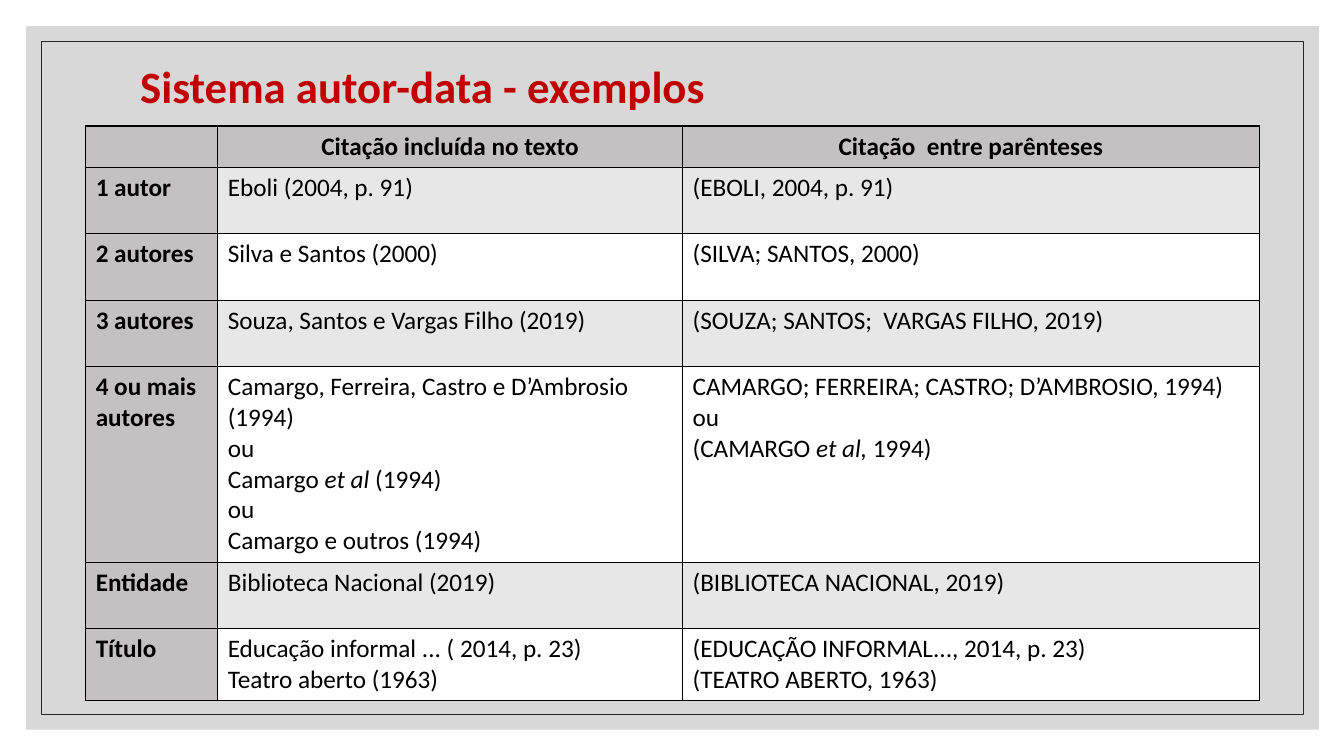
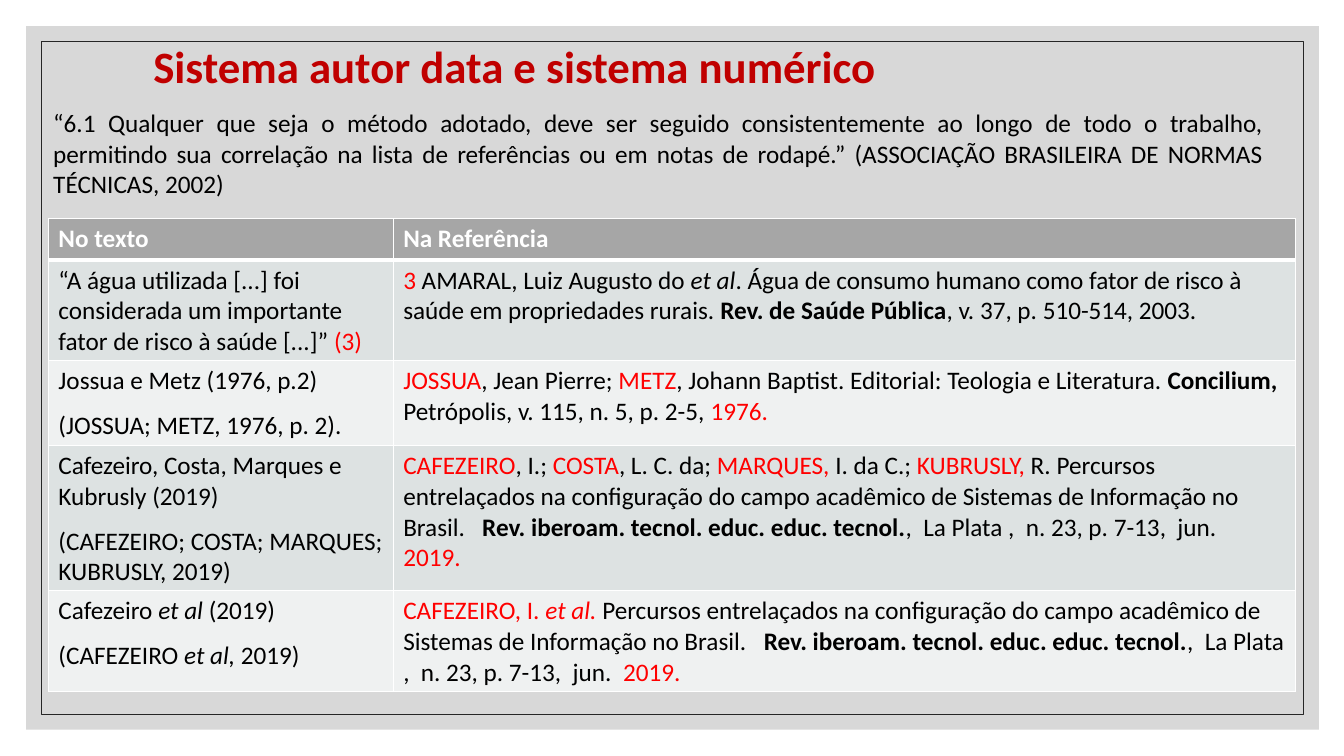
import pptx
import pptx.dml.color
import pptx.enum.shapes
import pptx.enum.text
import pptx.oxml
import pptx.oxml.ns
import pptx.util
from pptx.util import Inches

ALIGN = pptx.enum.text.PP_ALIGN
ANCHOR = pptx.enum.text.MSO_ANCHOR

BLACK, WHITE, RED = "000000", "FFFFFF", "FF0000"
TITLE_RED = "C00000"


def rgb(value):
    return pptx.dml.color.RGBColor.from_string(value)


def set_all(target, values):
    for name, value in values.items():
        setattr(target, name, value)


class Deck:
    """Shared style plus the slide being built."""

    font = "Calibri"
    body_size = 18
    title_size = 32

    def __init__(self):
        self.prs = pptx.Presentation()
        set_all(self.prs, {"slide_width": Inches(13.33), "slide_height": Inches(7.5)})

    def new_slide(self, title, left, top):
        self.s = self.prs.slides.add_slide(self.prs.slide_layouts[5])
        self.band(0.26, 0.26, 12.82, 6.98, fill="BFBFBF", alpha=60)
        self.band(0.41, 0.41, 12.52, 6.68, line="262626")
        self.title(title, left, top)

    def band(self, left, top, width, height, fill=None, alpha=100, line=None):
        sp = self.s.shapes.add_shape(
            pptx.enum.shapes.MSO_SHAPE.RECTANGLE,
            Inches(left), Inches(top), Inches(width), Inches(height))
        sp.shadow.inherit = False
        if fill:
            sp.fill.solid()
            sp.fill.fore_color.rgb = rgb(fill)
            color = sp._element.spPr.find(".//" + pptx.oxml.ns.qn("a:srgbClr"))
            color.append(pptx.oxml.parse_xml(
                f'<a:alpha {pptx.oxml.ns.nsdecls("a")} val="{alpha * 1000}"/>'))
        else:
            sp.fill.background()
        if line:
            sp.line.color.rgb = rgb(line)
            sp.line.width = pptx.util.Pt(0.5)
        else:
            sp.line.fill.background()

    def title(self, text, left, top):
        sp = self.s.shapes.title
        self.s.shapes._spTree.append(sp._element)  # in front of the bands
        set_all(sp, {"left": Inches(left), "top": Inches(top),
                     "width": Inches(10.01), "height": Inches(0.47)})
        tf = sp.text_frame
        set_all(tf, {"margin_left": 0, "margin_right": 0, "margin_top": 0,
                     "margin_bottom": 0, "vertical_anchor": ANCHOR.MIDDLE,
                     "word_wrap": True, "auto_size": pptx.enum.text.MSO_AUTO_SIZE.NONE})
        self.put_text(tf, [text], size=self.title_size, color=TITLE_RED, bold=True,
                      align=ALIGN.LEFT, line_spacing=0.9)

    def text(self, text, left, top, width, height, align):
        sp = self.s.shapes.add_textbox(
            Inches(left), Inches(top), Inches(width), Inches(height))
        sp.text_frame.word_wrap = True
        self.put_text(sp.text_frame, [text], align=align)

    def put_text(self, tf, paragraphs, size=body_size, color=BLACK, bold=False,
                 gap=0, align=None, line_spacing=None):
        """A paragraph is a string or a list of strings and (text, flags);
        flags are b for bold, i for italic, r for red."""
        for n, runs in enumerate(paragraphs):
            p = tf.add_paragraph() if n else tf.paragraphs[0]
            set_all(p, {"alignment": align, "line_spacing": line_spacing})
            if n and gap:
                p.space_before = pptx.util.Pt(gap)
            for item in [runs] if isinstance(runs, str) else runs:
                words, flags = (item, "") if isinstance(item, str) else item
                r = p.add_run()
                r.text = words
                set_all(r.font, {"name": self.font, "size": pptx.util.Pt(size),
                                 "bold": bold or "b" in flags, "italic": "i" in flags})
                r.font.color.rgb = rgb(RED if "r" in flags else color)

    def border(self, cell, color, **widths):
        tc_pr = cell._tc.get_or_add_tcPr()
        for side in "LRTB":
            width = pptx.util.Pt(widths.get(side, 1))
            tc_pr.append(pptx.oxml.parse_xml(
                f'<a:ln{side} {pptx.oxml.ns.nsdecls("a")} w="{width}"><a:solidFill>'
                f'<a:srgbClr val="{color}"/></a:solidFill></a:ln{side}>'))

    def table(self, rows, left, top, widths, heights, line, fills, header,
              header_rule=1, first_column=None, gap=0):
        """fills holds the two alternating row colours; header is a dict with
        the fill and the text format of the first row."""
        table = self.s.shapes.add_table(
            len(rows), len(widths), Inches(left), Inches(top),
            Inches(sum(widths)), Inches(sum(heights))).table
        set_all(table, {"first_row": False, "horz_banding": False})
        for column, width in zip(table.columns, widths):
            column.width = Inches(width)
        for i, (row, height) in enumerate(zip(rows, heights)):
            table.rows[i].height = Inches(height)
            for j, paragraphs in enumerate(row):
                cell = table.cell(i, j)
                look = {"fill": fills[(i - 1) % 2]}
                if i == 0:
                    look = dict(header)
                elif j == 0 and first_column:
                    look = dict(first_column)
                self.border(cell, line, B=header_rule if i == 0 else 1,
                            T=header_rule if i == 1 else 1)
                cell.fill.solid()
                cell.fill.fore_color.rgb = rgb(look.pop("fill"))
                self.put_text(cell.text_frame, paragraphs, gap=gap, **look)


def author_date_slide(deck):
    deck.new_slide("Sistema autor-data - exemplos", 1.39, 0.65)
    rows = [
        [[], ["Citação incluída no texto"], ["Citação  entre parênteses"]],
        [["1 autor"], ["Eboli (2004, p. 91)"], ["(EBOLI, 2004, p. 91)"]],
        [["2 autores"], ["Silva e Santos (2000)"], ["(SILVA; SANTOS, 2000)"]],
        [["3 autores"], ["Souza, Santos e Vargas Filho (2019)"],
         ["(SOUZA; SANTOS;  VARGAS FILHO, 2019)"]],
        [["4 ou mais autores"],
         ["Camargo, Ferreira, Castro e D’Ambrosio (1994)", "ou",
          ["Camargo ", ("et al ", "i"), "(1994)"], "ou", "Camargo e outros (1994)"],
         ["CAMARGO; FERREIRA; CASTRO; D’AMBROSIO, 1994)", "ou",
          ["(CAMARGO ", ("et al, ", "i"), "1994)"]]],
        [["Entidade"], ["Biblioteca Nacional (2019)"], ["(BIBLIOTECA NACIONAL, 2019)"]],
        [["Título"],
         ["Educação informal ... ( 2014, p. 23)", "Teatro aberto (1963)"],
         ["(EDUCAÇÃO INFORMAL..., 2014, p. 23)", "(TEATRO ABERTO, 1963)"]],
    ]
    label = {"fill": "C3C1C1", "bold": True}
    deck.table(rows, 0.85, 1.25, [1.31, 4.61, 5.72],
               [0.41, 0.66, 0.66, 0.66, 1.94, 0.66, 0.71],
               line=BLACK, fills=["E7E7E7", WHITE],
               header={**label, "align": ALIGN.CENTER}, first_column=label)


def numeric_slide(deck):
    deck.new_slide("Sistema autor data e sistema numérico", 1.52, 0.45)
    deck.text(
        "“6.1 Qualquer que seja o método adotado, deve ser seguido consistentemente "
        "ao longo de todo o trabalho, permitindo sua correlação na lista de "
        "referências ou em notas de rodapé.” (ASSOCIAÇÃO BRASILEIRA DE NORMAS "
        "TÉCNICAS, 2002)", 0.43, 1.02, 12.2, 1.01, ALIGN.JUSTIFY)
    # Ending shared by the last two references
    article = [
        "Percursos entrelaçados na configuração do campo acadêmico de Sistemas de "
        "Informação no Brasil. ",
        ("  Rev. iberoam. tecnol. educ. educ. tecnol.", "b"),
        ",  La Plata ,  n. 23, p. 7-13,  jun.  ", ("2019.", "r")]
    rows = [
        [["No texto"], ["Na Referência"]],
        [[["“A água utilizada [...] foi considerada um importante fator de risco à "
           "saúde [...]” ", ("(3)", "r")]],
         [[("3 ", "r"), "AMARAL, Luiz Augusto do ", ("et al", "i"),
           ". Água de consumo humano como fator de risco à saúde em propriedades "
           "rurais. ", ("Rev. de Saúde Pública", "b"), ", v. 37, p. 510-514, 2003."]]],
        [["Jossua e Metz (1976, p.2)", "(JOSSUA; METZ, 1976, p. 2)."],
         [[("JOSSUA", "r"), ", Jean Pierre; ", ("METZ", "r"),
           ", Johann Baptist. Editorial: Teologia e Literatura. ",
           ("Concilium, ", "b"), "Petrópolis, v. 115, n. 5, p. 2-5, ",
           ("1976.", "r")]]],
        [["Cafezeiro, Costa, Marques e Kubrusly (2019)",
          "(CAFEZEIRO; COSTA; MARQUES; KUBRUSLY, 2019)"],
         [[("CAFEZEIRO", "r"), ", I.; ", ("COSTA", "r"), ", L. C. da; ",
           ("MARQUES, ", "r"), "I. da C.; ", ("KUBRUSLY, ", "r"), "R. ", *article]]],
        [[["Cafezeiro ", ("et al ", "i"), "(2019)"],
          ["(CAFEZEIRO ", ("et al, ", "i"), "2019)"]],
         [[("CAFEZEIRO, I. ", "r"), ("et al.", "ri"), " ", *article]]],
    ]
    deck.table(rows, 0.48, 2.17, [3.42, 8.95], [0.41, 1, 0.83, 1.43, 1],
               line=WHITE, fills=["DDE2E2", "EFF1F1"], header_rule=3, gap=10,
               header={"fill": "A6A6A6", "color": WHITE, "bold": True})


def main():
    deck = Deck()
    author_date_slide(deck)
    numeric_slide(deck)
    deck.prs.save("out.pptx")


if __name__ == "__main__":
    main()
